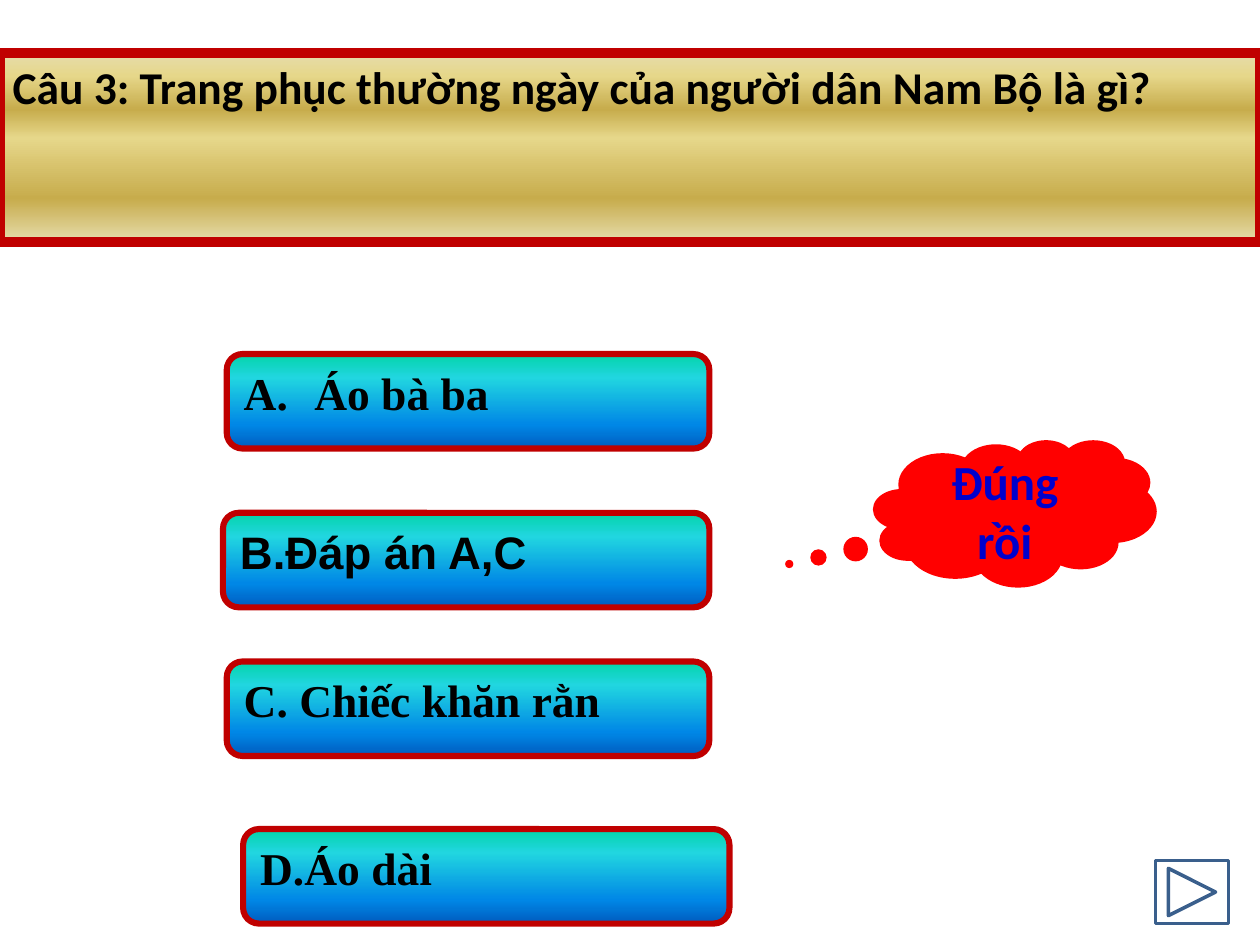
from lxml import etree
from pptx import Presentation
from pptx.dml.color import RGBColor
from pptx.enum import shapes, text
from pptx.oxml import ns
from pptx.util import Inches, Pt

BLACK = RGBColor(0x00, 0x00, 0x00)
RED = RGBColor(0xFF, 0x00, 0x00)
BLUE = RGBColor(0x00, 0x00, 0xCC)
DARK_RED = RGBColor(0xC0, 0x00, 0x00)
STEEL = RGBColor(0x3A, 0x5F, 0x8C)
GOLD_STOPS = [
    (0, RGBColor(0xE6, 0xDC, 0xAC)), (12, RGBColor(0xE6, 0xD7, 0x8A)),
    (30, RGBColor(0xC7, 0xAC, 0x4C)), (45, RGBColor(0xE6, 0xD7, 0x8A)),
    (77, RGBColor(0xC7, 0xAC, 0x4C)), (100, RGBColor(0xE6, 0xDC, 0xAC)),
]
OCEAN_STOPS = [
    (0, RGBColor(0x03, 0xD4, 0xA8)), (25, RGBColor(0x21, 0xD6, 0xE0)),
    (75, RGBColor(0x00, 0x87, 0xE6)), (100, RGBColor(0x00, 0x5C, 0xBF)),
]


def write(box, words, font="Calibri", size=26, color=BLACK,
          align=text.PP_ALIGN.LEFT, anchor=text.MSO_ANCHOR.TOP,
          hanging=False, numbered=False):
    frame = box.text_frame
    frame.word_wrap = True
    frame.auto_size = text.MSO_AUTO_SIZE.NONE
    frame.vertical_anchor = anchor
    para = frame.paragraphs[0]
    para.alignment = align
    if hanging:
        properties = para._p.get_or_add_pPr()
        properties.set("marL", str(Inches(0.56)))
        properties.set("indent", str(Inches(-0.56)))
        if numbered:
            etree.SubElement(properties, ns.qn("a:buAutoNum"), type="alphaUcPeriod")
        tabs = etree.SubElement(properties, ns.qn("a:tabLst"))
        etree.SubElement(tabs, ns.qn("a:tab"), pos=str(Inches(0.5)), algn="l")
    span = para.add_run()
    span.text = words
    span.font.name = font
    span.font.size = Pt(size)
    span.font.bold = True
    span.font.color.rgb = color


def decorate(box, stops, line_width):
    """Top-to-bottom gradient with a dark red outline."""
    box.fill.gradient()
    box.fill.gradient_angle = 270
    stop_list = box._element.spPr.find(".//" + ns.qn("a:gsLst"))
    for stop in list(stop_list):
        stop_list.remove(stop)
    for percent, color in stops:
        stop = etree.SubElement(stop_list, ns.qn("a:gs"), pos=str(percent * 1000))
        etree.SubElement(stop, ns.qn("a:srgbClr"), val=str(color))
    box.line.color.rgb = DARK_RED
    box.line.width = Pt(line_width)


deck = Presentation()
deck.slide_width, deck.slide_height = Inches(10), Inches(7.5)
page = deck.slides.add_slide(deck.slide_layouts[5])

# Question banner: the title placeholder as a rounded rectangle
question = page.shapes.title
question.left, question.top = Inches(0), Inches(0.42)
question.width, question.height = Inches(10), Inches(1.5)
geometry = etree.Element(ns.qn("a:prstGeom"), prst="roundRect")
etree.SubElement(geometry, ns.qn("a:avLst"))
question._element.spPr.insert(1, geometry)
decorate(question, GOLD_STOPS, 5.5)
write(question, "Câu 3: Trang phục thường ngày của người dân Nam Bộ là gì?")

# Feedback cloud
cloud = page.shapes.add_shape(shapes.MSO_SHAPE.CLOUD_CALLOUT, Inches(6.93),
                              Inches(3.49), Inches(2.25), Inches(1.17))
cloud.adjustments[0], cloud.adjustments[1] = -0.796, 0.343
cloud.shadow.inherit = False
cloud.fill.solid()
cloud.fill.fore_color.rgb = RED
cloud.line.fill.background()
write(cloud, "Đúng rồi", size=28, color=BLUE, align=text.PP_ALIGN.CENTER,
      anchor=text.MSO_ANCHOR.MIDDLE)

# Next button
button = page.shapes.add_shape(shapes.MSO_SHAPE.ACTION_BUTTON_FORWARD_OR_NEXT,
                               Inches(9.17), Inches(6.83), Inches(0.58), Inches(0.5))
button.shadow.inherit = False
button.fill.background()
button.line.color.rgb = STEEL
button.line.width = Pt(2)

# Answers: left, top, width, words, text format
SERIF = "Times New Roman"
answers = [
    (1.8, 2.81, 3.83, "Áo bà ba", dict(font=SERIF, hanging=True, numbered=True)),
    (1.77, 4.07, 3.86, "B.Đáp án A,C", dict(font="Arial")),
    (1.8, 5.25, 3.83, "C. Chiếc khăn rằn", dict(font=SERIF, hanging=True)),
    (1.93, 6.58, 3.86, "D.Áo dài", dict(font=SERIF, hanging=True)),
]
for left, top, width, words, style in answers:
    answer = page.shapes.add_shape(shapes.MSO_SHAPE.ROUNDED_RECTANGLE, Inches(left),
                                   Inches(top), Inches(width), Inches(0.75))
    answer.shadow.inherit = False
    decorate(answer, OCEAN_STOPS, 3.5)
    write(answer, words, **style)

deck.save("out.pptx")
